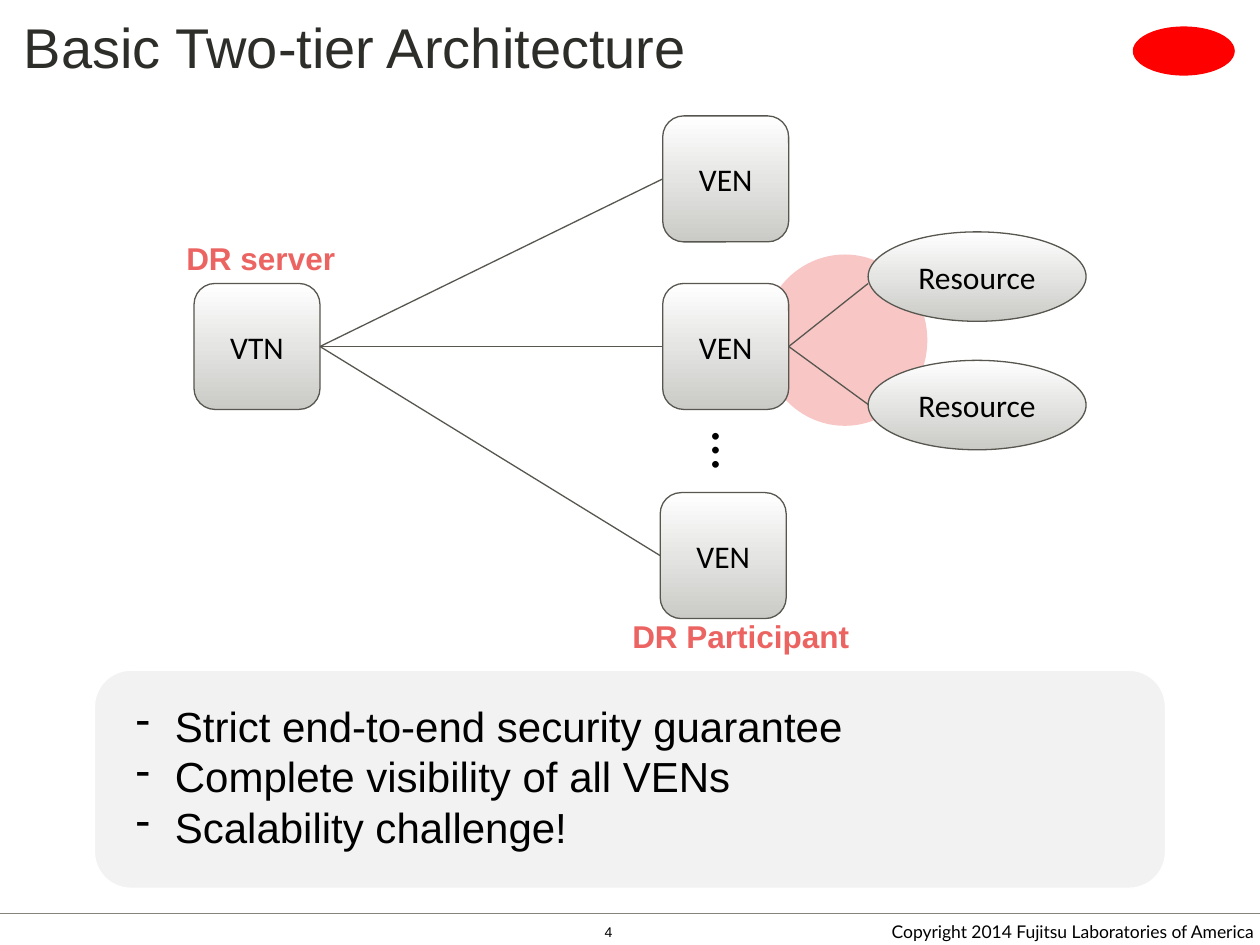
from dataclasses import dataclass
from lxml import etree
from pptx import Presentation
from pptx.dml.color import RGBColor
from pptx.enum.shapes import MSO_CONNECTOR as Connector, MSO_SHAPE as Shape
from pptx.enum.text import MSO_ANCHOR as Anchor, MSO_AUTO_SIZE as AutoSize, PP_ALIGN as Align
from pptx.oxml.ns import qn
from pptx.util import Inches, Pt


@dataclass(frozen=True)
class Theme:
    title: str = "2D2D2A"
    ink: str = "000000"
    accent: str = "EC6462"
    halo: str = "F8C6C5"
    panel: str = "F2F2F2"
    white: str = "FFFFFF"
    node_end: str = "CACAC7"
    line: str = "57564F"
    footer_line: str = "87867E"
    logo: str = "FF0000"
    sans: str = "Arial"
    node_font: str = "Calibri"
    footer_font: str = "Lato"
    title_size: int = 32
    list_size: int = 24
    label_size: int = 18
    footer_size: int = 10
    number_size: int = 8


THEME = Theme()


def color(value):
    return RGBColor.from_string(value)


def set_font(para, size, name, ink=THEME.ink, bold=False):
    font = para.font
    font.size, font.name, font.bold = Pt(size), name, bold
    font.color.rgb = color(ink)


def set_margins(frame, margin):
    frame.margin_left = frame.margin_right = Inches(margin)
    frame.margin_top = frame.margin_bottom = Inches(margin)


def add_title(page, text):
    title = page.shapes.title
    title.left, title.top = Inches(0.19), Inches(0.04)
    title.width, title.height = Inches(8.75), Inches(0.65)
    frame = title.text_frame
    frame.text = text
    frame.auto_size = AutoSize.NONE
    frame.vertical_anchor = Anchor.MIDDLE
    set_margins(frame, 0)
    frame.paragraphs[0].alignment = Align.LEFT
    set_font(frame.paragraphs[0], THEME.title_size, THEME.sans, THEME.title)


def add_shape(page, kind, left, top, width, height, fill=None, line=None):
    shape = page.shapes.add_shape(
        kind, Inches(left), Inches(top), Inches(width), Inches(height))
    shape.shadow.inherit = False
    if fill:
        shape.fill.solid()
        shape.fill.fore_color.rgb = color(fill)
    if line:
        shape.line.color.rgb = color(line)
        shape.line.width = Pt(0.75)
    else:
        shape.line.fill.background()
    return shape


def add_node(page, kind, text, left, top, width, height):
    node = add_shape(page, kind, left, top, width, height, line=THEME.line)
    node.fill.gradient()
    node.fill.gradient_angle = 270
    for stop, position, shade in zip(
            node.fill.gradient_stops, (0, 1), (THEME.white, THEME.node_end)):
        stop.position = position
        stop.color.rgb = color(shade)
    frame = node.text_frame
    frame.text = text
    frame.word_wrap = False
    frame.vertical_anchor = Anchor.MIDDLE
    frame.paragraphs[0].alignment = Align.CENTER
    set_font(frame.paragraphs[0], THEME.label_size, THEME.node_font)


def add_line(page, start, end, ink=THEME.line, width=0.75):
    line = page.shapes.add_connector(
        Connector.STRAIGHT, *(Inches(value) for value in (*start, *end)))
    line.line.color.rgb = color(ink)
    line.line.width = Pt(width)
    etree.SubElement(line._element.spPr, qn("a:effectLst"))


def add_text(page, text, left, top, width, height, size, name,
             ink=THEME.ink, bold=False, wrap=True, grow=True):
    box = page.shapes.add_textbox(
        Inches(left), Inches(top), Inches(width), Inches(height))
    frame = box.text_frame
    frame.text = text
    frame.word_wrap = wrap
    frame.auto_size = AutoSize.SHAPE_TO_FIT_TEXT if grow else AutoSize.NONE
    for para in frame.paragraphs:
        set_font(para, size, name, ink, bold)
    return box


def add_dash_list(page, items, left, top, width, height):
    box = add_text(page, "\n".join(items), left, top, width, height,
                   THEME.list_size, THEME.sans)
    for para in box.text_frame.paragraphs:
        props = para._p.get_or_add_pPr()
        props.set("marL", str(Inches(0.31)))
        props.set("indent", str(-Inches(0.31)))
        bullet = etree.Element(qn("a:buChar"), char="-")
        props.insert(0, bullet)


def add_diagram(page):
    add_shape(page, Shape.OVAL, 6.05, 2.02, 1.31, 1.36, THEME.halo)
    side, middle = 1, 2.75
    server_left = 1.54
    server_port = (server_left + side, middle)
    add_node(page, Shape.ROUNDED_RECTANGLE, "VTN", server_left, middle - side / 2, side, side)
    for left, top in ((5.26, 2.25), (5.26, 0.92), (5.24, 3.91)):
        add_node(page, Shape.ROUNDED_RECTANGLE, "VEN", left, top, side, side)
        add_line(page, server_port, (left, top + side / 2))
    for top, joint in ((1.84, 2.25), (2.86, 3.21)):
        add_node(page, Shape.OVAL, "Resource", 6.89, top, 1.73, 0.71)
        add_line(page, (6.26, middle), (6.89, joint))
    dots = add_text(page, "…", 5.63, 3.21, 0.4, 0.64, THEME.title_size, THEME.node_font)
    dots.rotation = 90
    for text, left, top, width in (("DR server", 1.38, 1.85, 1.39),
                                   ("DR Participant", 4.92, 4.85, 1.94)):
        add_text(page, text, left, top, width, 0.4, THEME.label_size, THEME.sans,
                 THEME.accent, bold=True, wrap=False)


def add_footer(page):
    add_line(page, (0, 7.25), (10, 7.25), THEME.footer_line, 1)
    notice = add_text(page, "Copyright 2014 Fujitsu Laboratories of America",
                      5.55, 7.28, 4.4, 0.22, THEME.footer_size, THEME.footer_font,
                      wrap=False, grow=False)
    set_margins(notice.text_frame, 0)
    notice.text_frame.vertical_anchor = Anchor.MIDDLE
    notice.text_frame.paragraphs[0].alignment = Align.RIGHT
    add_text(page, "4", 4.7, 7.28, 0.59, 0.22, THEME.number_size, THEME.sans, grow=False)


def main():
    deck = Presentation()
    deck.slide_width, deck.slide_height = Inches(10), Inches(7.5)
    page = deck.slides.add_slide(deck.slide_layouts[5])
    add_title(page, "Basic Two-tier Architecture")
    add_shape(page, Shape.OVAL, 8.99, 0.21, 0.81, 0.39, THEME.logo)
    add_diagram(page)
    add_footer(page)
    add_shape(page, Shape.ROUNDED_RECTANGLE, 0.75, 5.32, 8.5, 1.73, THEME.panel, THEME.white)
    add_dash_list(page, ("Strict end-to-end security guarantee",
                         "Complete visibility of all VENs",
                         "Scalability challenge!"), 0.98, 5.51, 8.19, 1.31)
    deck.save("out.pptx")


if __name__ == "__main__":
    main()
